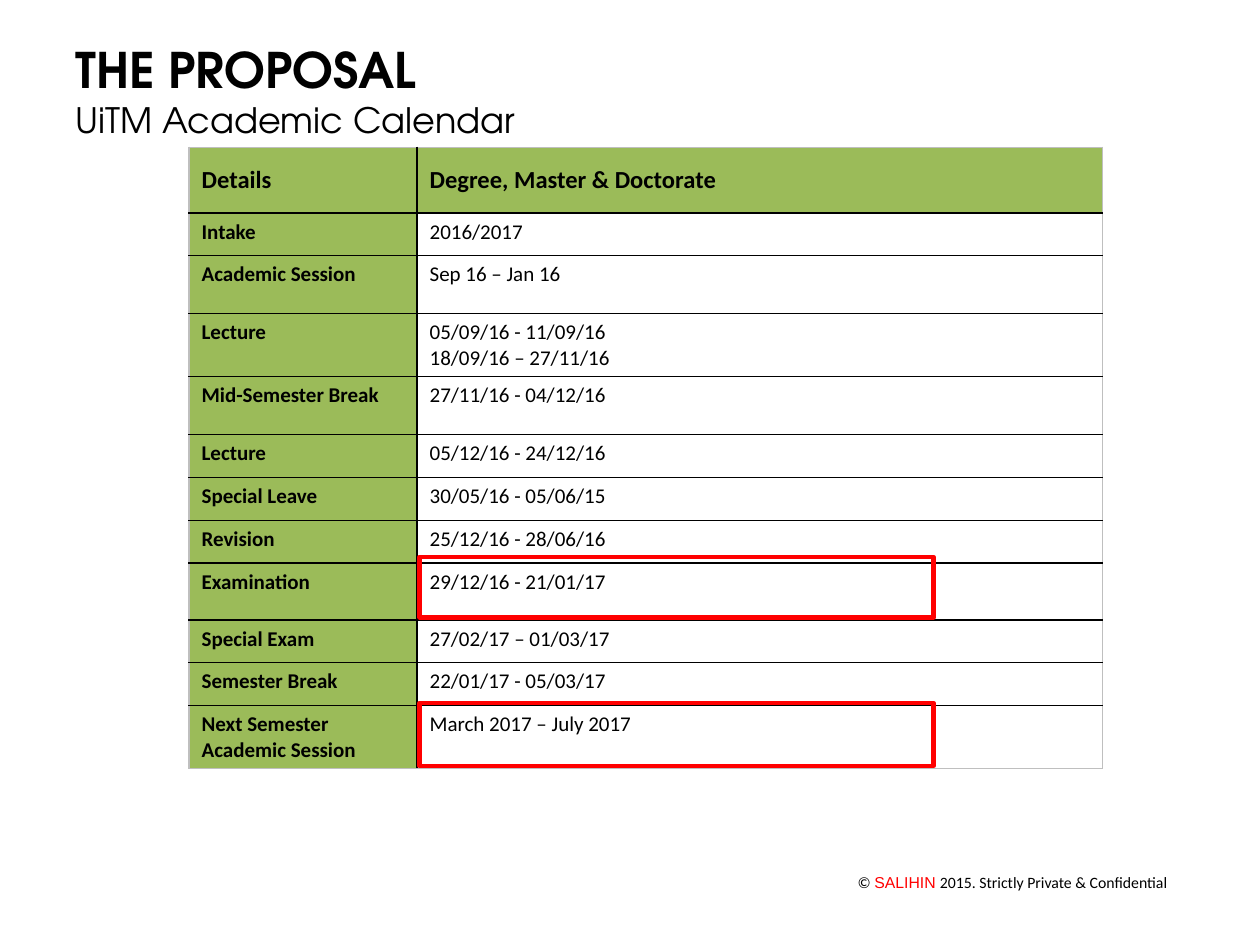
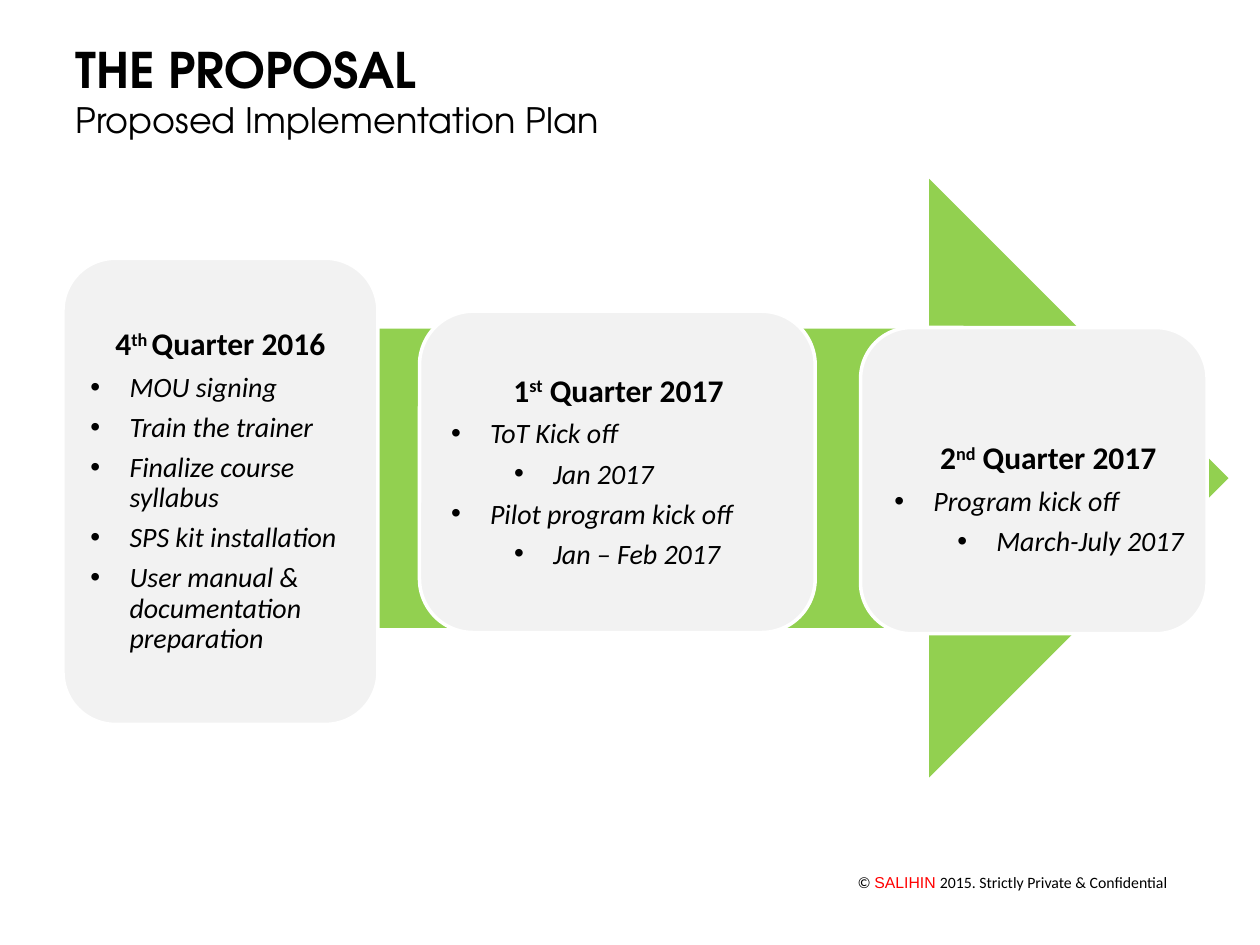
from dataclasses import dataclass

from lxml import etree
from pptx import Presentation
from pptx import util as u
from pptx.dml.color import RGBColor
from pptx.enum import shapes, text
from pptx.oxml import ns

PX = 9144  # EMU in one px, at 100 px to the inch

COLORS = {
    "ink": "000000",
    "paper": "FFFFFF",
    "alert": "FF0000",
    "header": "9BBB59",
    "arrow": "92D050",
    "card": "F2F2F2",
    "edge": "BFBFBF",
}
TITLE_FONT, BODY_FONT, BRAND_FONT = "TeX Gyre Adventor", "Calibri", "Arial"


@dataclass(frozen=True)
class Box:
    x: int
    y: int
    w: int
    h: int

    def emu(self) -> tuple[int, int, int, int]:
        return self.x * PX, self.y * PX, self.w * PX, self.h * PX


@dataclass(frozen=True)
class CalendarRow:
    label: str
    dates: str
    height: int


@dataclass(frozen=True)
class Phase:
    card: Box
    text_area: Box
    pad: int
    number: str
    ordinal: str
    quarter: str
    tasks: tuple[tuple[int, str], ...]  # (level, task)


# Shared layout
TITLE_BOX = Box(50, 26, 442, 57)
SUBTITLE_BOX = Box(50, 73, 675, 44)
FOOTER_BOX = Box(667, 688, 269, 25)
FOOTER = (
    ("© ", BODY_FONT, "ink"),
    ("SALIHIN ", BRAND_FONT, "alert"),
    ("2015. Strictly Private & Confidential", BODY_FONT, "ink"),
)

# Calendar content
CALENDAR_BOX = Box(150, 117, 725, 492)
CALENDAR_COLUMNS = (181, 544)
CALENDAR = (
    CalendarRow("Details", "Degree, Master & Doctorate", 52),
    CalendarRow("Intake", "2016/2017", 34),
    CalendarRow("Academic Session", "Sep 16 – Jan 16", 46),
    CalendarRow("Lecture", "05/09/16 - 11/09/16\n18/09/16 – 27/11/16", 50),
    CalendarRow("Mid-Semester Break", "27/11/16 - 04/12/16", 46),
    CalendarRow("Lecture", "05/12/16 - 24/12/16", 34),
    CalendarRow("Special Leave", "30/05/16 - 05/06/15", 34),
    CalendarRow("Revision", "25/12/16 - 28/06/16", 34),
    CalendarRow("Examination", "29/12/16 - 21/01/17", 45),
    CalendarRow("Special Exam", "27/02/17 – 01/03/17", 34),
    CalendarRow("Semester Break", "22/01/17 - 05/03/17", 34),
    CalendarRow("Next Semester\nAcademic Session", "March 2017 – July 2017", 50),
)
HIGHLIGHTS = (Box(333, 442, 408, 48), Box(333, 558, 408, 50))

# Implementation plan content
ARROW_BOX = Box(54, 142, 921, 475)
PHASES = (
    Phase(Box(50, 205, 250, 370), Box(62, 218, 226, 344), 10, "4", "th ", "Quarter 2016",
          ((0, "MOU signing"), (0, "Train the trainer"), (0, "Finalize course syllabus"),
           (0, "SPS kit installation"), (0, "User manual & documentation preparation"))),
    Phase(Box(333, 247, 314, 255), Box(346, 260, 290, 230), 12, "1", "st", " Quarter 2017",
          ((0, "ToT Kick off"), (1, "Jan 2017"),
           (0, "Pilot program kick off"), (1, "Jan – Feb 2017"))),
    Phase(Box(683, 260, 275, 243), Box(700, 339, 264, 116), 10, "2", "nd", " Quarter 2017",
          ((0, "Program kick off"), (1, "March-July 2017"))),
)


def rgb(name: str) -> RGBColor:
    return RGBColor.from_string(COLORS[name])


def style_run(r, font: str, size: int, color: str = "ink",
              bold: bool = False, italic: bool = False) -> None:
    f = r.font
    f.name, f.size, f.bold, f.italic = font, u.Pt(size), bold, italic
    f.color.rgb = rgb(color)


def add_text_box(slide, box: Box):
    sp = slide.shapes.add_textbox(*box.emu())
    sp.text_frame.word_wrap = True
    return sp


def add_shape(slide, kind, box: Box, fill: str | None = None,
              line: str | None = None, width: float = 0):
    sp = slide.shapes.add_shape(kind, *box.emu())
    sp.shadow.inherit = False
    if fill:
        sp.fill.solid()
        sp.fill.fore_color.rgb = rgb(fill)
    else:
        sp.fill.background()
    if line:
        sp.line.color.rgb = rgb(line)
        sp.line.width = u.Pt(width)
    else:
        sp.line.fill.background()
    return sp


def add_slide(prs, subtitle: str):
    """Add a slide with the shared title, subtitle and footer."""
    slide = prs.slides.add_slide(prs.slide_layouts[5])
    title = slide.shapes.title
    title.left, title.top, title.width, title.height = TITLE_BOX.emu()
    headings = ((title, "THE PROPOSAL", 28, True),
                (add_text_box(slide, SUBTITLE_BOX), subtitle, 20, False))
    for sp, words, size, bold in headings:
        tf = sp.text_frame
        tf.text = words
        tf.word_wrap = True
        tf.auto_size = text.MSO_AUTO_SIZE.SHAPE_TO_FIT_TEXT
        tf.vertical_anchor = text.MSO_ANCHOR.TOP
        p = tf.paragraphs[0]
        p.alignment = text.PP_ALIGN.LEFT
        style_run(p.runs[0], TITLE_FONT, size, bold=bold)

    p = add_text_box(slide, FOOTER_BOX).text_frame.paragraphs[0]
    p.alignment = text.PP_ALIGN.RIGHT
    for words, font, color in FOOTER:
        r = p.add_run()
        r.text = words
        style_run(r, font, 9, color)
    return slide


def set_borders(cell, edges: dict[str, str]) -> None:
    """Draw cell borders; edges maps L, R, T, B to colour names."""
    tc_pr = cell._tc.get_or_add_tcPr()
    for side, color in edges.items():
        ln = etree.SubElement(tc_pr, ns.qn(f"a:ln{side}"), w=str(u.Pt(1)))
        fill = etree.SubElement(ln, ns.qn("a:solidFill"))
        etree.SubElement(fill, ns.qn("a:srgbClr"), val=COLORS[color])


def add_calendar(slide) -> None:
    last_row, last_col = len(CALENDAR) - 1, len(CALENDAR_COLUMNS) - 1
    frame = slide.shapes.add_table(last_row + 1, last_col + 1, *CALENDAR_BOX.emu())
    table = frame.table
    table.first_row = table.horz_banding = False
    for column, width in zip(table.columns, CALENDAR_COLUMNS):
        column.width = width * PX
    for i, row in enumerate(CALENDAR):
        table.rows[i].height = row.height * PX
        for j, words in enumerate((row.label, row.dates)):
            cell = table.cell(i, j)
            cell.text = words
            is_header = i == 0
            is_label = is_header or j == 0
            set_borders(cell, {
                "L": "edge" if j == 0 else "ink",
                "R": "edge" if j == last_col else "ink",
                "T": "edge" if is_header else "ink",
                "B": "edge" if i == last_row else "ink",
            })
            if is_label:
                cell.fill.solid()
                cell.fill.fore_color.rgb = rgb("header")
            else:
                cell.fill.background()
            if is_header:
                cell.vertical_anchor = text.MSO_ANCHOR.MIDDLE
            for p in cell.text_frame.paragraphs:
                style_run(p.runs[0], BODY_FONT, 14 if is_header else 12, bold=is_label)


def space_lines(p, size: int) -> None:
    p.line_spacing = 0.9
    p.space_after = u.Pt(size * 0.35)


def add_bullet(p, level: int) -> None:
    p.level = level
    p_pr = p._p.get_or_add_pPr()
    p_pr.set("marL", str((31 + 50 * level) * PX))
    p_pr.set("indent", str(-31 * PX))
    etree.SubElement(p_pr, ns.qn("a:buFont"), typeface="Arial")
    etree.SubElement(p_pr, ns.qn("a:buChar"), char="•")


def add_phase(slide, phase: Phase) -> None:
    add_shape(slide, shapes.MSO_SHAPE.ROUNDED_RECTANGLE, phase.card, "card", "paper", 2)
    tf = add_text_box(slide, phase.text_area).text_frame
    tf.vertical_anchor = text.MSO_ANCHOR.MIDDLE
    tf.margin_left = tf.margin_right = tf.margin_top = tf.margin_bottom = phase.pad * PX

    # Quarter heading with a raised ordinal
    p = tf.paragraphs[0]
    p.alignment = text.PP_ALIGN.CENTER
    space_lines(p, 18)
    for words in (phase.number, phase.ordinal, phase.quarter):
        r = p.add_run()
        r.text = words
        style_run(r, BODY_FONT, 18, bold=True)
    p.runs[1]._r.get_or_add_rPr().set("baseline", "30000")

    # Tasks
    for level, task in phase.tasks:
        p = tf.add_paragraph()
        p.text = task
        add_bullet(p, level)
        space_lines(p, 16)
        style_run(p.runs[0], BODY_FONT, 16, italic=True)


def main() -> None:
    prs = Presentation()
    prs.slide_width, prs.slide_height = 1000 * PX, 750 * PX

    # Academic calendar
    slide = add_slide(prs, "UiTM Academic Calendar")
    add_calendar(slide)
    for box in HIGHLIGHTS:
        add_shape(slide, shapes.MSO_SHAPE.RECTANGLE, box, line="alert", width=2.5)

    # Implementation plan
    slide = add_slide(prs, "Proposed Implementation Plan")
    add_shape(slide, shapes.MSO_SHAPE.RIGHT_ARROW, ARROW_BOX, "arrow")
    for phase in PHASES:
        add_phase(slide, phase)

    prs.save("out.pptx")


if __name__ == "__main__":
    main()
